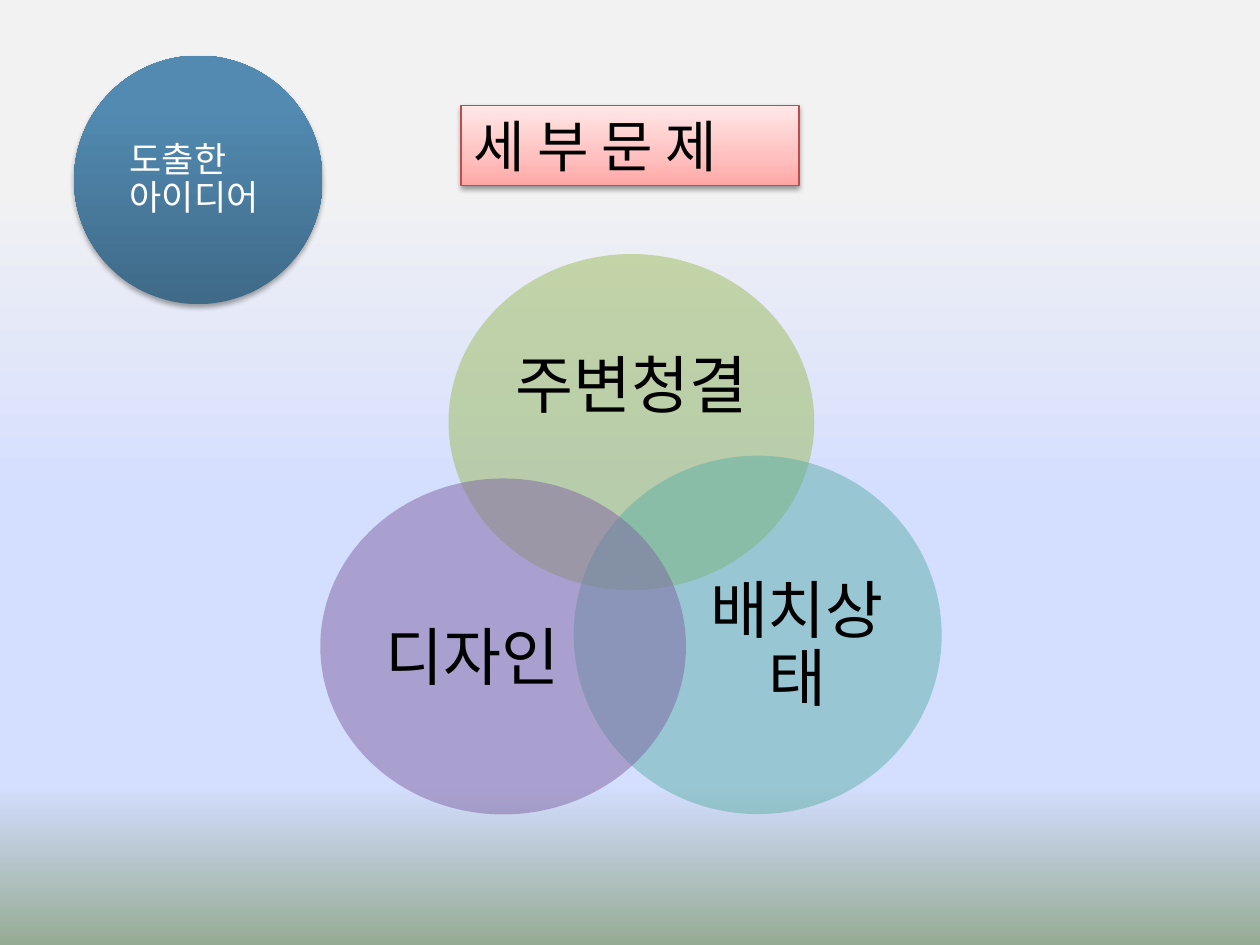
from lxml.etree import SubElement
from pptx import Presentation
from pptx.dml.color import RGBColor
from pptx.enum.shapes import MSO_SHAPE
from pptx.enum.text import MSO_ANCHOR, MSO_AUTO_SIZE, PP_ALIGN
from pptx.oxml.ns import qn
from pptx.util import Pt

COLORS = {
    "black": "000000", "white": "FFFFFF",
    "green": "9BBB59", "teal": "5EAFA6", "purple": "8064A2", "red": "BF4C48",
}
SKY = [(19, "F2F2F2"), (53, "D4DEFF"), (83, "D4DEFF"), (100, "96AB94")]
BLUES = [(0, "3F6A88"), (80, "528AB1"), (100, "518AB3")]
PINKS = [(0, "FFA6A5"), (35, "FFC0BF"), (100, "FFE7E7")]
DOWN, UP = 90, 270


class VennSlide:
    font_name = "Noto Sans CJK KR"

    def __init__(self, deck):
        self.slide = deck.slides.add_slide(deck.slide_layouts[5])
        self.gradient(self.slide.background.fill, self.slide.element, SKY, DOWN)

    def gradient(self, fill, element, stops, angle):
        fill.gradient()
        gradient = element.find(".//" + qn("a:gradFill"))
        stop_list = gradient.find(qn("a:gsLst"))
        for old_stop in list(stop_list):
            stop_list.remove(old_stop)
        for percent, color in stops:
            stop = SubElement(stop_list, qn("a:gs"), pos=str(percent * 1000))
            SubElement(stop, qn("a:srgbClr"), val=color)
        gradient.find(qn("a:lin")).set("ang", str(angle * 60000))

    def shadow(self, shape, distance, opacity):
        shape.shadow.inherit = False
        effects = shape.element.spPr.find(qn("a:effectLst"))
        outer = SubElement(effects, qn("a:outerShdw"), blurRad=str(Pt(3.1)),
                           dist=str(Pt(distance)), dir=str(DOWN * 60000),
                           rotWithShape="0")
        color = SubElement(outer, qn("a:srgbClr"), val=COLORS["black"])
        SubElement(color, qn("a:alpha"), val=str(opacity * 1000))

    def set_text(self, shape, text, size, color, align, anchor, spacing):
        frame = shape.text_frame
        frame.text = text
        frame.word_wrap = True
        frame.auto_size = MSO_AUTO_SIZE.NONE
        frame.vertical_anchor = anchor
        paragraph = frame.paragraphs[0]
        paragraph.alignment = align
        paragraph.line_spacing = spacing
        paragraph.font.size = Pt(size)
        paragraph.font.name = self.font_name
        paragraph.font.color.rgb = RGBColor.from_string(COLORS[color])
        defaults = shape.element.find(".//" + qn("a:defRPr"))
        SubElement(defaults, qn("a:ea"), typeface=self.font_name)

    def ellipse(self, box):
        shape = self.slide.shapes.add_shape(MSO_SHAPE.OVAL, *map(Pt, box))
        shape.shadow.inherit = False
        shape.line.fill.background()
        return shape

    def title(self, text, box):
        title = self.slide.shapes.title
        title.left, title.top, title.width, title.height = map(Pt, box)
        self.gradient(title.fill, title.element, PINKS, UP)
        title.line.color.rgb = RGBColor.from_string(COLORS["red"])
        title.line.width = Pt(0.75)
        self.shadow(title, 1.6, 38)
        self.set_text(title, text, 32, "black", PP_ALIGN.LEFT, MSO_ANCHOR.TOP, 1.0)

    def venn_circle(self, color, box):
        circle = self.ellipse(box)
        circle.fill.solid()
        circle.fill.fore_color.rgb = RGBColor.from_string(COLORS[color])
        fill_color = circle.element.spPr.find(qn("a:solidFill"))[0]
        SubElement(fill_color, qn("a:alpha"), val="50000")

    def label(self, text, box):
        label = self.slide.shapes.add_textbox(*map(Pt, box))
        frame = label.text_frame
        frame.margin_left = frame.margin_right = 0
        frame.margin_top = frame.margin_bottom = 0
        self.set_text(label, text, 36, "black", PP_ALIGN.CENTER, MSO_ANCHOR.MIDDLE, 0.9)

    def badge(self, text, box):
        badge = self.ellipse(box)
        self.gradient(badge.fill, badge.element, BLUES, UP)
        self.shadow(badge, 1.8, 35)
        badge.text_frame.margin_left = Pt(11)
        badge.text_frame.margin_right = 0
        self.set_text(badge, text, 20, "white", PP_ALIGN.LEFT, MSO_ANCHOR.MIDDLE, 0.9)


def main():
    deck = Presentation()
    deck.slide_width, deck.slide_height = Pt(720), Pt(540)
    venn = VennSlide(deck)
    venn.title("세 부 문 제", (263.5, 60.3, 193, 45.8))
    topics = [
        ("주변청결", "green", (256.3, 145.2, 209, 192), (284.4, 178.6, 153.4, 86.4)),
        ("배치상태", "teal", (327.8, 260.4, 210.3, 204.8), (392.4, 313.2, 126, 113)),
        ("디자인", "purple", (183, 273.4, 209, 192), (207.5, 324, 125.5, 106)),
    ]
    for name, color, circle_box, label_box in topics:
        venn.venn_circle(color, circle_box)
        venn.label(name, label_box)
    venn.badge("도출한\v아이디어", (42.3, 31.8, 142, 142))
    deck.save("out.pptx")


if __name__ == "__main__":
    main()
